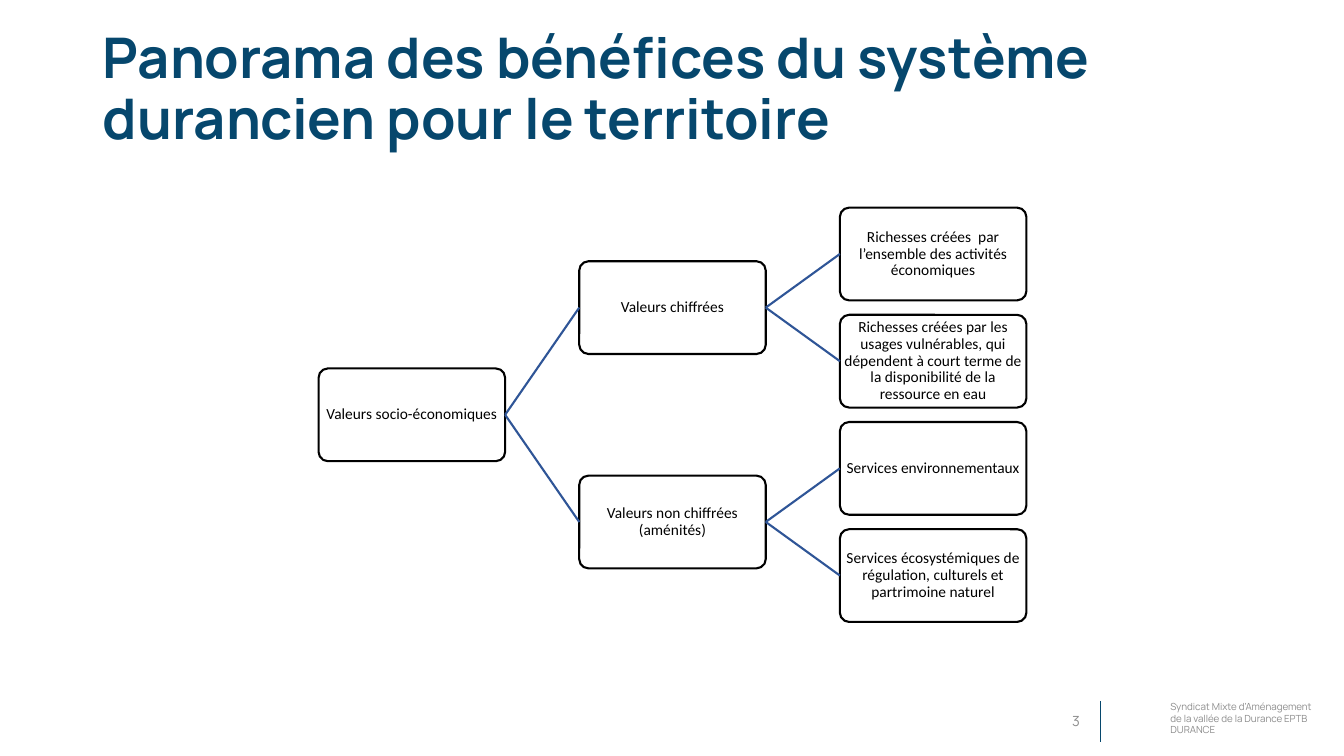
from lxml import etree
from pptx import Presentation
from pptx.dml.color import RGBColor
from pptx.enum.dml import MSO_LINE
from pptx.enum.shapes import MSO_CONNECTOR, MSO_SHAPE
from pptx.enum.text import MSO_ANCHOR, MSO_AUTO_SIZE, PP_ALIGN
from pptx.oxml.ns import qn
from pptx.util import Inches, Pt

LEFT, CENTER, RIGHT = PP_ALIGN.LEFT, PP_ALIGN.CENTER, PP_ALIGN.RIGHT
MIDDLE, NO_FIT = MSO_ANCHOR.MIDDLE, MSO_AUTO_SIZE.NONE
STRAIGHT, ROUNDED = MSO_CONNECTOR.STRAIGHT, MSO_SHAPE.ROUNDED_RECTANGLE
DOTTED = MSO_LINE.ROUND_DOT
RIGHT_SIDE, LEFT_SIDE = 3, 1

COLORS = {"navy": "06476D", "grey": "8C8C8C", "black": "000000",
          "white": "FFFFFF", "link": "2F5597"}

TITLE = "Panorama des bénéfices du système durancien pour le territoire"
OWNER = "Syndicat Mixte d’Aménagement de la vallée de la Durance EPTB DURANCE"
TREE = ("Valeurs socio-économiques", [
    ("Valeurs chiffrées", [
        ("Richesses créées  par l’ensemble des activités économiques", []),
        ("Richesses créées par les usages vulnérables, qui dépendent à court "
         "terme de la disponibilité de la ressource en eau", []),
    ]),
    ("Valeurs non chiffrées (aménités)", [
        ("Services environnementaux", []),
        ("Services écosystémiques de régulation, culturels et "
         "partrimoine naturel", []),
    ]),
])
LEVELS, LEAVES = 3, 4
NODE_WIDTH, NODE_HEIGHT = 1.85, 0.92


def color(name):
    """Return the palette colour with this name."""
    return RGBColor.from_string(COLORS[name])


def write(shape, text, *, size, ink, font="Manrope", bold=False, align=LEFT,
          spacing=1.0, after=0, inset=None):
    """Write one formatted paragraph, vertically centred in the shape."""
    frame = shape.text_frame
    frame.word_wrap = True
    frame.auto_size = NO_FIT
    frame.vertical_anchor = MIDDLE
    if inset is not None:
        frame.margin_left = frame.margin_right = Inches(inset)
        frame.margin_top = frame.margin_bottom = Inches(inset)
    para = frame.paragraphs[0]
    para.alignment = align
    para.line_spacing = spacing
    para.space_before = Pt(0)
    para.space_after = Pt(after)
    span = para.add_run()
    span.text = text
    span.font.name = font
    span.font.size = Pt(size)
    span.font.bold = bold
    span.font.color.rgb = color(ink)


def add_line(page, ink, width, start=(0, 0), end=(0, 0)):
    """Add a straight line without a shadow."""
    line = page.shapes.add_connector(
        STRAIGHT, *(Inches(length) for length in (*start, *end)))
    line.line.color.rgb = color(ink)
    line.line.width = Pt(width)
    etree.SubElement(line._element.spPr, qn("a:effectLst"))
    return line


def add_title(page, left, top, width, height):
    """Place the slide title in its box."""
    title = page.shapes.title
    title.left, title.top = Inches(left), Inches(top)
    title.width, title.height = Inches(width), Inches(height)
    write(title, TITLE, size=40, ink="navy", bold=True, spacing=0.9)


def add_footer(page, left, top, width, height):
    """Place the page number, dotted divider and owner in the footer box."""
    divider = left + 3.1
    number = page.shapes.add_textbox(
        Inches(left), Inches(top), Inches(3), Inches(height))
    write(number, "3", size=10, ink="grey", align=RIGHT)
    line = add_line(page, "navy", 0.25, (divider, top + height), (divider, top))
    line.line.dash_style = DOTTED
    owner_left = divider + 0.6
    owner = page.shapes.add_textbox(
        Inches(owner_left), Inches(top - 0.09),
        Inches(left + width - owner_left), Inches(height + 0.13))
    write(owner, OWNER, size=7, ink="grey")


def add_node(page, text, left, middle):
    """Draw one rounded node centred on the given height."""
    node = page.shapes.add_shape(
        ROUNDED, Inches(left), Inches(middle - NODE_HEIGHT / 2),
        Inches(NODE_WIDTH), Inches(NODE_HEIGHT))
    node.adjustments[0] = 0.1
    node.shadow.inherit = False
    node.fill.solid()
    node.fill.fore_color.rgb = color("white")
    node.line.color.rgb = color("black")
    node.line.width = Pt(1.5)
    write(node, text, size=11, ink="black", font="Calibri", align=CENTER,
          spacing=0.9, after=10, inset=0.01)
    return node


def add_tree(page, left, top, width, height):
    """Draw the value tree, each parent halfway between its children."""
    column_step = (width - NODE_WIDTH) / (LEVELS - 1)
    row_step = (height - NODE_HEIGHT) / (LEAVES - 1)
    leaf_middles = (top + NODE_HEIGHT / 2 + row * row_step
                    for row in range(LEAVES))

    def add_branch(branch, level):
        """Draw a branch and return its node and its middle height."""
        text, children = branch
        drawn = [add_branch(child, level + 1) for child in children]
        if drawn:
            middle = sum(height for _, height in drawn) / len(drawn)
        else:
            middle = next(leaf_middles)
        node = add_node(page, text, left + level * column_step, middle)
        for child, _ in drawn:
            link = add_line(page, "link", 1.5)
            link.begin_connect(node, RIGHT_SIDE)
            link.end_connect(child, LEFT_SIDE)
        return node, middle

    add_branch(TREE, 0)


def main():
    """Build and save the slide."""
    deck = Presentation()
    deck.slide_width, deck.slide_height = Inches(13.33), Inches(7.5)
    page = deck.slides.add_slide(deck.slide_layouts[5])
    add_title(page, 0.92, 0, 11.42, 1.8)
    add_tree(page, 3.16, 2.06, 7.02, 4.11)
    add_footer(page, 7.81, 6.95, 5.33, 0.4)
    deck.save("out.pptx")


if __name__ == "__main__":
    main()
